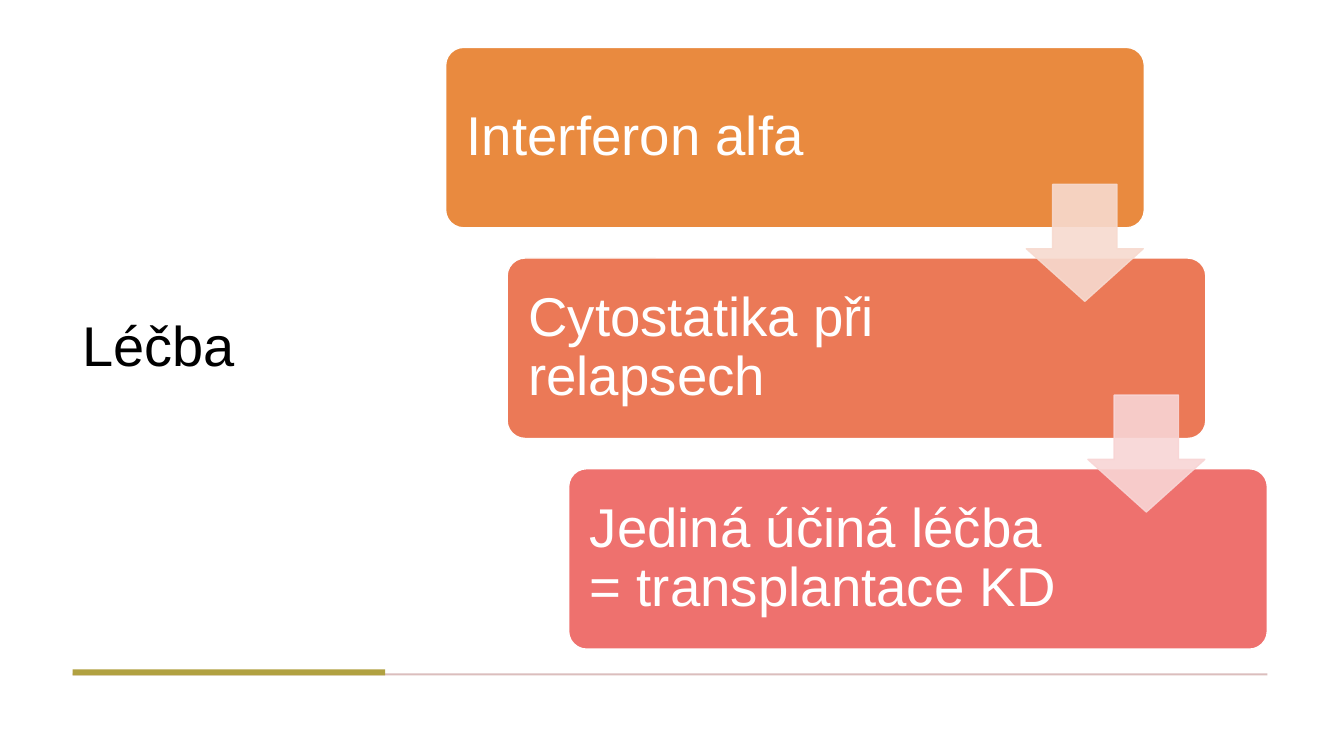
from lxml import etree
from pptx import Presentation
from pptx.dml.color import RGBColor
from pptx.enum.shapes import MSO_SHAPE
from pptx.enum.text import MSO_ANCHOR
from pptx.oxml.ns import qn
from pptx.util import Inches, Pt

RECT = MSO_SHAPE.RECTANGLE
ROUNDED = MSO_SHAPE.ROUNDED_RECTANGLE
DOWN_ARROW = MSO_SHAPE.DOWN_ARROW
MIDDLE = MSO_ANCHOR.MIDDLE

WHITE = RGBColor(0xFF, 0xFF, 0xFF)
BLACK = RGBColor(0, 0, 0)
OLIVE = RGBColor(0xB1, 0xA1, 0x41)
ROSE = RGBColor(0xDB, 0xBE, 0xBD)
ORANGE = RGBColor(0xE9, 0x8A, 0x3F)
CORAL = RGBColor(0xEB, 0x79, 0x57)
RED = RGBColor(0xEE, 0x71, 0x6E)
PEACH = RGBColor(0xF7, 0xDA, 0xCF)
PINK = RGBColor(0xF8, 0xD5, 0xD5)

TITLE = "Léčba"
STEPS = [
    ("Interferon alfa", ORANGE, 4.99),
    ("Cytostatika při relapsech", CORAL, 5.05),
    ("Jediná účiná léčba = transplantace KD", RED, 5.05),
]
ARROWS = [PEACH, PINK]
RULES = [(6.68, 11.85, 0.02, ROSE), (6.64, 3.1, 0.06, OLIVE)]

LEFT, TOP = 0.72, 0.47
STEP_LEFT, STEP_W, STEP_H = 4.42, 6.93, 1.79
STEP_DX, STEP_DY = 0.61, 2.09
ARROW_LEFT, ARROW_TOP, ARROW_SIZE = 10.18, 1.83, 1.16


def add_box(s, kind, x, y, w, h, color, line=None, adjustments=()):
    sp = s.shapes.add_shape(kind, Inches(x), Inches(y), Inches(w), Inches(h))
    sp.shadow.inherit = False
    sp.fill.solid()
    sp.fill.fore_color.rgb = color
    if line is None:
        sp.line.fill.background()
    else:
        sp.line.color.rgb = line
        sp.line.width = Pt(1)
    for i, value in enumerate(adjustments):
        sp.adjustments[i] = value
    return sp


def add_text(s, text, x, y, w, h, size, color, inset):
    tf = s.shapes.add_textbox(Inches(x), Inches(y), Inches(w), Inches(h)).text_frame
    tf.word_wrap = True
    tf.vertical_anchor = MIDDLE
    tf.margin_left = tf.margin_right = Inches(inset)
    tf.margin_top = tf.margin_bottom = Inches(inset)
    tf.text = text
    p = tf.paragraphs[0]
    p.line_spacing = 0.9
    r = p.runs[0]
    r.font.name = "Arial"
    r.font.size = Pt(size)
    r.font.color.rgb = color


def set_opacity(sp, percent):
    for clr in sp.element.spPr.iter(qn("a:srgbClr")):
        etree.SubElement(clr, qn("a:alpha")).set("val", str(percent * 1000))


prs = Presentation()
prs.slide_width = Inches(13.33)
prs.slide_height = Inches(7.5)
s = prs.slides.add_slide(prs.slide_layouts[6])

add_text(s, TITLE, LEFT, TOP, 3.1, 5.97, 40, BLACK, 0.1)

for y, w, h, color in RULES:
    add_box(s, RECT, LEFT, y, w, h, color)

for i, (text, color, text_w) in enumerate(STEPS):
    x, y = STEP_LEFT + i * STEP_DX, TOP + i * STEP_DY
    add_box(s, ROUNDED, x, y, STEP_W, STEP_H, color, WHITE, [0.1])
    add_text(s, text, x + 0.05, y + 0.05, text_w, STEP_H - 0.1, 39, WHITE, 0.16)

for i, color in enumerate(ARROWS):
    x, y = ARROW_LEFT + i * STEP_DX, ARROW_TOP + i * STEP_DY
    arrow = add_box(s, DOWN_ARROW, x, y, ARROW_SIZE, ARROW_SIZE, color, color, [0.55, 0.45])
    set_opacity(arrow, 90)

prs.save("out.pptx")
